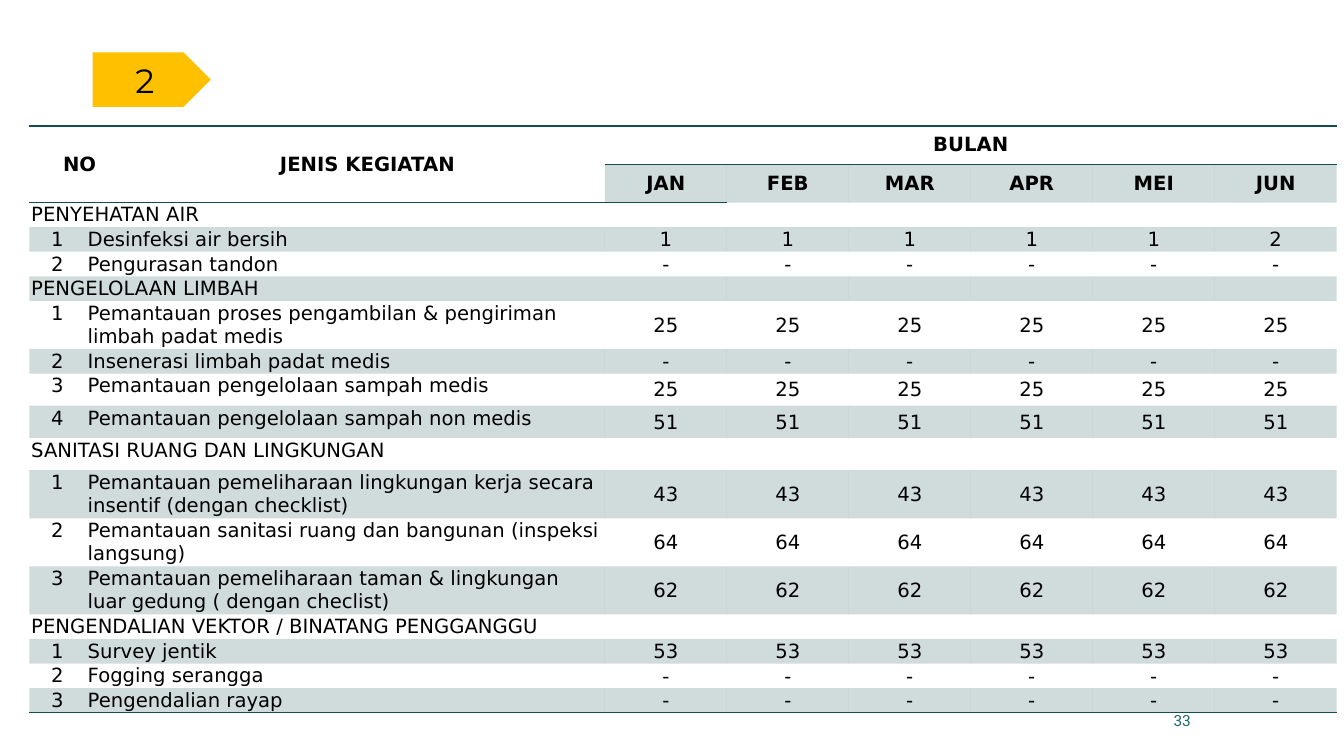
from lxml.etree import SubElement
from pptx import Presentation
from pptx.dml.color import RGBColor
from pptx.enum.shapes import MSO_SHAPE as Shape
from pptx.enum.text import MSO_ANCHOR as Anchor, PP_ALIGN as Align
from pptx.oxml import parse_xml
from pptx.oxml.ns import nsdecls, qn
from pptx.util import Inches, Pt

# Content
SECTION_NUMBER = "2"
PAGE_NUMBER = "33"
MONTHS = ["JAN", "FEB", "MAR", "APR", "MEI", "JUN"]
# Each section: title, last column of the title, title height,
# activities (name, monthly values, row height)
SECTIONS = [
    ("PENYEHATAN AIR", 2, 0.24, [
        ("Desinfeksi air bersih", ["1"] * 5 + ["2"], 0.24),
        ("Pengurasan tandon", ["-"] * 6, 0.24),
    ]),
    ("PENGELOLAAN LIMBAH", 4, 0.24, [
        ("Pemantauan proses pengambilan & pengiriman limbah padat medis", ["25"] * 6, 0.47),
        ("Insenerasi limbah padat medis", ["-"] * 6, 0.24),
        ("Pemantauan pengelolaan sampah medis", ["25"] * 6, 0.32),
        ("Pemantauan pengelolaan sampah non medis", ["51"] * 6, 0.32),
    ]),
    ("SANITASI RUANG DAN LINGKUNGAN", 4, 0.32, [
        ("Pemantauan pemeliharaan lingkungan kerja secara insentif (dengan checklist)",
         ["43"] * 6, 0.47),
        ("Pemantauan sanitasi ruang dan bangunan (inspeksi langsung)", ["64"] * 6, 0.47),
        ("Pemantauan pemeliharaan taman & lingkungan luar gedung ( dengan checlist)",
         ["62"] * 6, 0.47),
    ]),
    ("PENGENDALIAN VEKTOR / BINATANG PENGGANGGU", 4, 0.24, [
        ("Survey jentik", ["53"] * 6, 0.24),
        ("Fogging serangga", ["-"] * 6, 0.24),
        ("Pengendalian rayap", ["-"] * 6, 0.24),
    ]),
]

# Theme
THEME = {
    "text": "000000", "accent": "164B4F", "tag": "FFC000", "page": "1F696F",
    "table_font": "DejaVu Sans", "tag_font": "Montserrat", "page_font": "Roboto",
    "table_size": 14, "tag_size": 24, "page_size": 11,
    "band_alpha": 20, "rule_width": 1,
}
NO_STYLE = "{2D5ABB26-0587-4C30-8999-92F81FD0307C}"

# Layout
HEADER_HEIGHTS = [0.38, 0.38]
LABEL_WIDTHS = [0.56, 0.43, 3.29, 1.42]
MONTH_WIDTH = 1.21
FIRST_MONTH = len(LABEL_WIDTHS)
HEADER_INSETS = (0.2, 0.07, 0.2, 0.07)
BODY_INSETS = (0.02, 0.01, 0.02, 0)


def write(frame, text, font=THEME["table_font"], size=THEME["table_size"],
          color=THEME["text"], bold=False, align=Align.LEFT):
    paragraph = frame.paragraphs[0]
    paragraph.alignment = align
    run = paragraph.add_run()
    run.text = text
    run.font.name, run.font.size, run.font.bold = font, Pt(size), bold
    run.font.color.rgb = RGBColor.from_string(color)


def set_up_cell(cell, insets, shaded):
    """Set insets, fill and the height of an empty line."""
    cell.margin_left, cell.margin_top, cell.margin_right, cell.margin_bottom = map(Inches, insets)
    end = SubElement(cell.text_frame.paragraphs[0]._p, qn("a:endParaRPr"))
    end.set("sz", str(THEME["table_size"] * 100))
    SubElement(end, qn("a:latin")).set("typeface", THEME["table_font"])
    if not shaded:
        cell.fill.background()
        return
    cell.fill.solid()
    cell.fill.fore_color.rgb = RGBColor.from_string(THEME["accent"])
    color = cell._tc.tcPr.find(qn("a:solidFill")).find(qn("a:srgbClr"))
    SubElement(color, qn("a:alpha")).set("val", str(THEME["band_alpha"] * 1000))


def add_rule(cell, side):
    properties = cell._tc.get_or_add_tcPr()
    line = parse_xml(
        f'<a:ln{side} {nsdecls("a")} w="{Pt(THEME["rule_width"])}"><a:solidFill>'
        f'<a:srgbClr val="{THEME["accent"]}"/></a:solidFill></a:ln{side}>')
    properties.insert(0, line)


def merge(table, row, first, last, last_row=None):
    table.cell(row, first).merge(table.cell(row if last_row is None else last_row, last))


def add_section_tag(slide):
    tag = slide.shapes.add_shape(Shape.PENTAGON, Inches(0.92), Inches(0.52),
                                 Inches(1.17), Inches(0.54))
    tag.shadow.inherit = False
    tag.fill.solid()
    tag.fill.fore_color.rgb = RGBColor.from_string(THEME["tag"])
    tag.line.fill.background()
    tag.text_frame.vertical_anchor = Anchor.MIDDLE
    write(tag.text_frame, SECTION_NUMBER, font=THEME["tag_font"], size=THEME["tag_size"],
          align=Align.CENTER)


def add_page_number(slide):
    box = slide.shapes.add_textbox(Inches(8.8), Inches(6.95), Inches(3.11), Inches(0.4))
    box.text_frame.word_wrap = True
    box.text_frame.vertical_anchor = Anchor.MIDDLE
    write(box.text_frame, PAGE_NUMBER, font=THEME["page_font"], size=THEME["page_size"],
          color=THEME["page"], align=Align.RIGHT)


def add_schedule(slide):
    widths = LABEL_WIDTHS + [MONTH_WIDTH] * len(MONTHS)
    heights = list(HEADER_HEIGHTS)
    for _, _, title_height, activities in SECTIONS:
        heights += [title_height] + [height for _, _, height in activities]
    frame = slide.shapes.add_table(len(heights), len(widths), Inches(0.29), Inches(1.25),
                                   Inches(sum(widths)), Inches(sum(heights)))
    table = frame.table
    table.first_row = table.horz_banding = False
    table._tbl.tblPr.find(qn("a:tableStyleId")).text = NO_STYLE
    for column, width in zip(table.columns, widths):
        column.width = Inches(width)
    for row, height in zip(table.rows, heights):
        row.height = Inches(height)

    # Bands: every second row, leaving out the merged header labels
    header_rows = len(HEADER_HEIGHTS)
    for row in range(len(heights)):
        for column in range(len(widths)):
            in_header = row < header_rows
            shaded = row % 2 == 1 and (not in_header or column >= FIRST_MONTH)
            set_up_cell(table.cell(row, column),
                        HEADER_INSETS if in_header else BODY_INSETS, shaded)

    # Rules
    last_row, last_column = len(heights) - 1, len(widths) - 1
    for column in range(len(widths)):
        add_rule(table.cell(0, column), "B")
        add_rule(table.cell(0, column), "T")
        add_rule(table.cell(last_row, column), "B")
        if column <= FIRST_MONTH:
            add_rule(table.cell(1, column), "B")

    def put(row, column, text, anchor=Anchor.MIDDLE, **style):
        cell = table.cell(row, column)
        cell.vertical_anchor = anchor
        write(cell.text_frame, text, **style)

    # Header
    heading = {"bold": True, "align": Align.CENTER}
    for text, first, last, bottom in [("NO", 0, 1, 1), ("JENIS KEGIATAN", 2, 3, 1),
                                      ("BULAN", FIRST_MONTH, last_column, 0)]:
        merge(table, 0, first, last, bottom)
        put(0, first, text, **heading)
    for column, month in enumerate(MONTHS, FIRST_MONTH):
        put(1, column, month, **heading)

    # Sections and their activities
    row = header_rows
    for title, title_end, _, activities in SECTIONS:
        merge(table, row, 0, title_end)
        if title_end < FIRST_MONTH:
            merge(table, row, title_end + 1, FIRST_MONTH)
        put(row, 0, title, anchor=Anchor.TOP)
        for number, (name, values, _) in enumerate(activities, 1):
            row += 1
            merge(table, row, 1, FIRST_MONTH - 1)
            put(row, 0, str(number), anchor=Anchor.TOP, align=Align.CENTER)
            put(row, 1, name, anchor=Anchor.TOP)
            for column, value in enumerate(values, FIRST_MONTH):
                put(row, column, value, align=Align.CENTER)
        row += 1


def main():
    presentation = Presentation()
    presentation.slide_width, presentation.slide_height = Inches(13.33), Inches(7.5)
    slide = presentation.slides.add_slide(presentation.slide_layouts[6])
    add_page_number(slide)
    add_section_tag(slide)
    add_schedule(slide)
    presentation.save("out.pptx")


if __name__ == "__main__":
    main()
